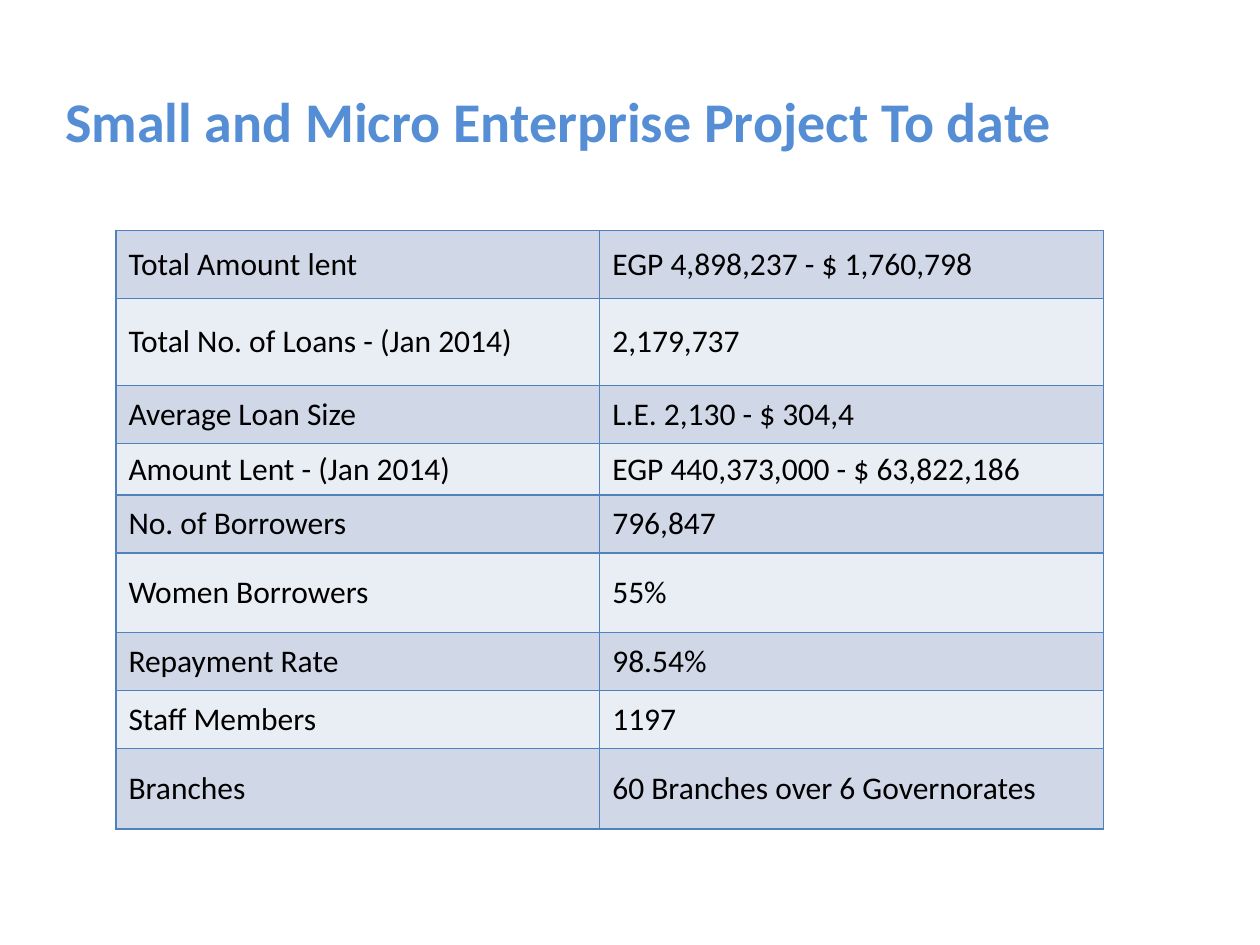
from lxml.etree import SubElement
from pptx import Presentation
from pptx.dml.color import RGBColor
from pptx.enum.text import MSO_ANCHOR as Anchor
from pptx.oxml.ns import qn
from pptx.util import Inches, Pt


def rgb(color):
    return RGBColor.from_string(color)


def add_borders(cell, color, width):
    tc_pr = cell._tc.get_or_add_tcPr()
    for side in ("lnL", "lnR", "lnT", "lnB"):
        ln = SubElement(tc_pr, qn(f"a:{side}"), w=str(Pt(width)))
        fill = SubElement(ln, qn("a:solidFill"))
        SubElement(fill, qn("a:srgbClr"), val=color)


prs = Presentation()
prs.slide_width, prs.slide_height = Inches(10), Inches(7.5)
s = prs.slides.add_slide(prs.slide_layouts[6])

title = s.shapes.add_textbox(Inches(0.42), Inches(0.33), Inches(9), Inches(1.25))
tf = title.text_frame
tf.word_wrap = True
tf.vertical_anchor = Anchor.MIDDLE
p = tf.paragraphs[0]
p.text = "Small and Micro Enterprise Project To date"
p.font.name, p.font.size, p.font.bold = "Calibri", Pt(32), True
p.font.color.rgb = rgb("558ED5")

rows = [
    (0.54, "Total Amount lent", "EGP 4,898,237 - $ 1,760,798"),
    (0.69, "Total No. of Loans - (Jan 2014)", "2,179,737"),
    (0.46, "Average Loan Size", "L.E. 2,130 - $ 304,4"),
    (0.41, "Amount Lent - (Jan 2014)", "EGP 440,373,000 - $ 63,822,186"),
    (0.46, "No. of Borrowers", "796,847"),
    (0.63, "Women Borrowers", "55%"),
    (0.46, "Repayment Rate", "98.54%"),
    (0.46, "Staff Members", "1197"),
    (0.64, "Branches", "60 Branches over 6 Governorates"),
]
bands = ["D0D8E8", "E9EDF4"]

table = s.shapes.add_table(
    len(rows), 2, Inches(0.92), Inches(1.83), Inches(7.84), Inches(4.75)
).table
table.first_row = False
table.columns[0].width, table.columns[1].width = Inches(3.84), Inches(4)

for i, (height, *texts) in enumerate(rows):
    table.rows[i].height = Inches(height)
    for j, text in enumerate(texts):
        cell = table.cell(i, j)
        add_borders(cell, "4F81BD", 1)
        cell.fill.solid()
        cell.fill.fore_color.rgb = rgb(bands[i % 2])
        cell.vertical_anchor = Anchor.MIDDLE
        p = cell.text_frame.paragraphs[0]
        p.text = text
        p.font.name, p.font.size = "Calibri", Pt(18)
        p.font.color.rgb = rgb("000000")

prs.save("out.pptx")
